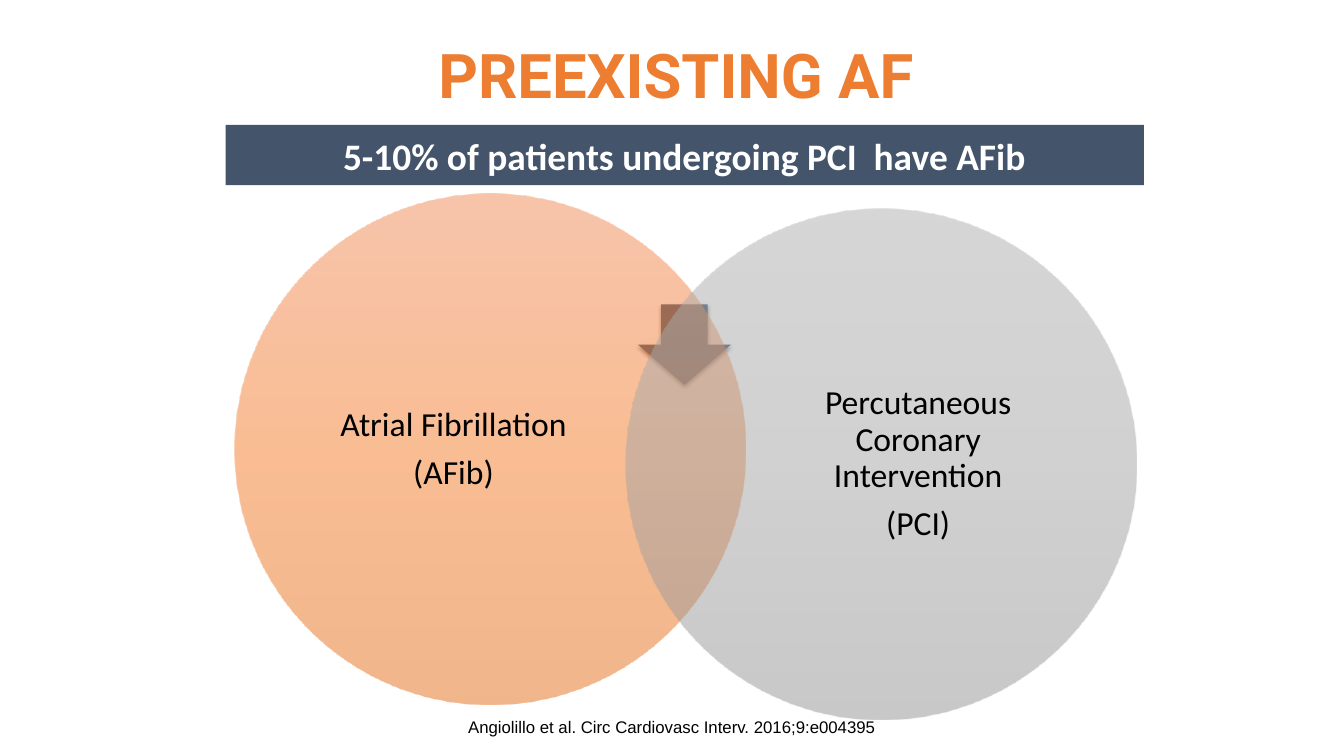
from dataclasses import dataclass

from lxml.etree import SubElement
from pptx import Presentation
from pptx.dml.color import RGBColor as RGB
from pptx.enum.shapes import MSO_SHAPE as SHAPE
from pptx.enum.text import MSO_ANCHOR as ANCHOR, PP_ALIGN as ALIGN
from pptx.oxml import parse_xml
from pptx.oxml.ns import nsdecls, qn
from pptx.util import Cm, Pt

TITLE = "PREEXISTING AF"
BANNER = "5-10% of patients undergoing PCI  have AFib"
CITATION = "Angiolillo et al. Circ Cardiovasc Interv. 2016;9:e004395"
CONDITIONS = [
    {
        "lines": ["Atrial Fibrillation", "(AFib)"],
        "corner": (5.92, 4.88),
        "label_inset": 1.8,
        "tints": ["F18C57", "F67B28", "E56C19"],
    },
    {
        "lines": ["Percutaneous Coronary Intervention", "(PCI)"],
        "corner": (15.77, 5.26),
        "label_inset": 3.66,
        "tints": ["AFAFAF", "A5A5A5", "939393"],
    },
]


@dataclass(frozen=True)
class Theme:
    accent: RGB = RGB(0xED, 0x7D, 0x31)
    slate: RGB = RGB(0x44, 0x54, 0x6A)
    white: RGB = RGB(0xFF, 0xFF, 0xFF)
    black: RGB = RGB(0, 0, 0)
    title_size: float = 44
    banner_size: float = 26.7
    label_size: float = 24
    citation_size: float = 12


THEME = Theme()
WIDTH, HEIGHT = 33.87, 19.05
DIAMETER = 12.88
LABEL_WIDTH, LABEL_HEIGHT = 7.42, 9.86


def box(left, top, width, height):
    return Cm(left), Cm(top), Cm(width), Cm(height)


def write(frame, lines, face, size, color, bold=False, spacing=1.0, after=0, inset=None):
    frame.word_wrap = True
    frame.vertical_anchor = ANCHOR.MIDDLE
    if inset is not None:
        frame.margin_left = frame.margin_right = Cm(inset)
        frame.margin_top = frame.margin_bottom = Cm(inset)
    frame.text = "\n".join(lines)
    for paragraph in frame.paragraphs:
        paragraph.alignment = ALIGN.CENTER
        paragraph.line_spacing = spacing
        paragraph.space_before = Pt(0)
        paragraph.space_after = Pt(after)
        font = paragraph.font
        font.name, font.size, font.bold = face, Pt(size), bold
        font.color.rgb = color


def add_plain(slide, kind, bounds, color=None):
    shape = slide.shapes.add_shape(kind, *bounds)
    shape.shadow.inherit = False
    shape.line.fill.background()
    if color is not None:
        shape.fill.solid()
        shape.fill.fore_color.rgb = color
    return shape


def tint_circle(circle, tints):
    stops = "".join(
        f'<a:gs pos="{index * 50000}"><a:srgbClr val="{tint}">'
        '<a:alpha val="50000"/></a:srgbClr></a:gs>'
        for index, tint in enumerate(tints)
    )
    gradient = parse_xml(
        f'<a:gradFill {nsdecls("a")} rotWithShape="1"><a:gsLst>{stops}</a:gsLst>'
        '<a:lin ang="5400000" scaled="0"/></a:gradFill>'
    )
    circle.element.spPr.find(qn("a:prstGeom")).addnext(gradient)


def cast_shadow(shape):
    effects = shape.element.spPr.find(qn("a:effectLst"))
    shadow = SubElement(
        effects, qn("a:outerShdw"), blurRad=str(Pt(3)), dist=str(Pt(2)),
        dir="5400000", algn="ctr", rotWithShape="0",
    )
    color = SubElement(shadow, qn("a:srgbClr"), val="000000")
    SubElement(color, qn("a:alpha"), val="50000")


def main():
    deck = Presentation()
    deck.slide_width, deck.slide_height = Cm(WIDTH), Cm(HEIGHT)
    slide = deck.slides.add_slide(deck.slide_layouts[5])

    title = slide.shapes.title
    title.left, title.top, title.width, title.height = box(2.44, 0.15, 29.21, 3.68)
    write(title.text_frame, [TITLE], "Roboto", THEME.title_size, THEME.accent,
          bold=True, spacing=0.9)

    banner = add_plain(slide, SHAPE.RECTANGLE, box(5.69, 3.15, 23.14, 1.52), THEME.slate)
    write(banner.text_frame, [BANNER], "Calibri", THEME.banner_size, THEME.white,
          bold=True, inset=0.18)

    arrow = add_plain(slide, SHAPE.DOWN_ARROW, box(16.08, 7.67, 2.34, 2.03), THEME.slate)
    cast_shadow(arrow)

    citation = slide.shapes.add_textbox(*box(0, 17.93, WIDTH, 0.76))
    write(citation.text_frame, [CITATION], "Arial", THEME.citation_size, THEME.black)

    for condition in CONDITIONS:
        left, top = condition["corner"]
        circle = add_plain(slide, SHAPE.OVAL, box(left, top, DIAMETER, DIAMETER))
        tint_circle(circle, condition["tints"])
        label_top = top + (DIAMETER - LABEL_HEIGHT) / 2
        label = slide.shapes.add_textbox(
            *box(left + condition["label_inset"], label_top, LABEL_WIDTH, LABEL_HEIGHT)
        )
        write(label.text_frame, condition["lines"], "Calibri", THEME.label_size,
              THEME.black, spacing=0.9, after=8.4, inset=0)

    deck.save("out.pptx")


if __name__ == "__main__":
    main()
